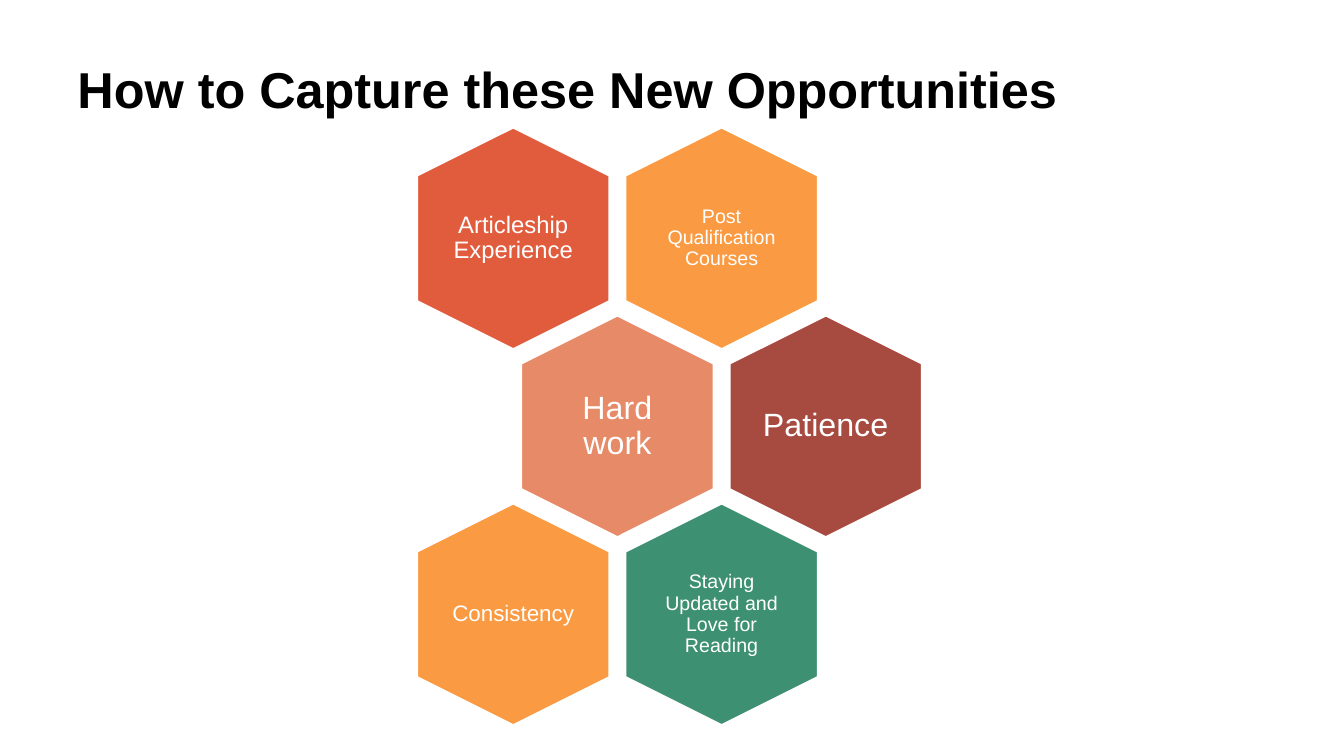
from dataclasses import dataclass

from pptx import Presentation
from pptx.dml.color import RGBColor
from pptx.enum.shapes import MSO_SHAPE as SHAPE
from pptx.enum.text import MSO_ANCHOR as ANCHOR, PP_ALIGN as ALIGN
from pptx.util import Pt

PX = 9144


@dataclass(frozen=True)
class Theme:
    font: str = "Arial"
    black: str = "000000"
    white: str = "FFFFFF"
    red: str = "E15C3D"
    orange: str = "FA9A42"
    salmon: str = "E78A67"
    brick: str = "A74B40"
    green: str = "3D9072"
    title: int = 36
    large: int = 23
    medium: int = 17
    regular: int = 16
    small: int = 14
    outline: float = 1.5


THEME = Theme()

QUALITIES = [
    [("Articleship Experience", THEME.red, THEME.medium, 0),
     ("Post Qualification Courses", THEME.orange, THEME.small, 6)],
    [("Hard work", THEME.salmon, THEME.large, 10),
     ("Patience", THEME.brick, THEME.large, 0)],
    [("Consistency", THEME.orange, THEME.regular, 0),
     ("Staying Updated and Love for Reading", THEME.green, THEME.small, 6)],
]


def px(*lengths):
    return [round(n * PX) for n in lengths]


def add_text(shapes, box, text, size, color, inset, bold=False,
             align=ALIGN.LEFT, anchor=ANCHOR.TOP):
    tf = shapes.add_textbox(*px(*box)).text_frame
    tf.word_wrap = True
    tf.vertical_anchor = anchor
    tf.margin_left, tf.margin_top, tf.margin_right, tf.margin_bottom = px(*inset)
    p = tf.paragraphs[0]
    p.text = text
    p.alignment = align
    p.line_spacing = 0.9
    font = p.runs[0].font
    font.name = THEME.font
    font.size = Pt(size)
    font.bold = bold
    font.color.rgb = RGBColor.from_string(color)


def add_title(s, box):
    add_text(s.shapes, box, "How to Capture these New Opportunities",
             THEME.title, THEME.black, (10, 5, 10, 5), bold=True)


def add_hexagon(shapes, box, text, fill, size, inset):
    x, y, w, h = box
    sp = shapes.add_shape(SHAPE.HEXAGON, *px(*box))
    sp.rotation = 90
    sp.adjustments[0] = 0.25
    sp.shadow.inherit = False
    sp.fill.solid()
    sp.fill.fore_color.rgb = RGBColor.from_string(fill)
    sp.line.color.rgb = RGBColor.from_string(THEME.white)
    sp.line.width = Pt(THEME.outline)
    add_text(shapes, (x + 44, y + 20, w - 88, h - 40), text, size, THEME.white,
             (inset,) * 4, align=ALIGN.CENTER, anchor=ANCHOR.MIDDLE)


def add_honeycomb(s, box):
    left, top, width, height = box
    hex_w, hex_h = 220, 191
    step_x = (width - hex_w) * 2 / 3
    step_y = (height - hex_h) / (len(QUALITIES) - 1)
    shapes = s.shapes.add_group_shape().shapes
    for row, cells in enumerate(QUALITIES):
        for col, (text, fill, size, inset) in enumerate(cells):
            x = left + (col + row % 2 / 2) * step_x
            y = top + row * step_y
            add_hexagon(shapes, (x, y, hex_w, hex_h), text, fill, size, inset)


def main():
    prs = Presentation()
    prs.slide_width, prs.slide_height = px(1333, 750)
    s = prs.slides.add_slide(prs.slide_layouts[6])
    add_title(s, (67, 60, 1165, 124))
    add_honeycomb(s, (399, 141, 530, 564))
    prs.save("out.pptx")


if __name__ == "__main__":
    main()
